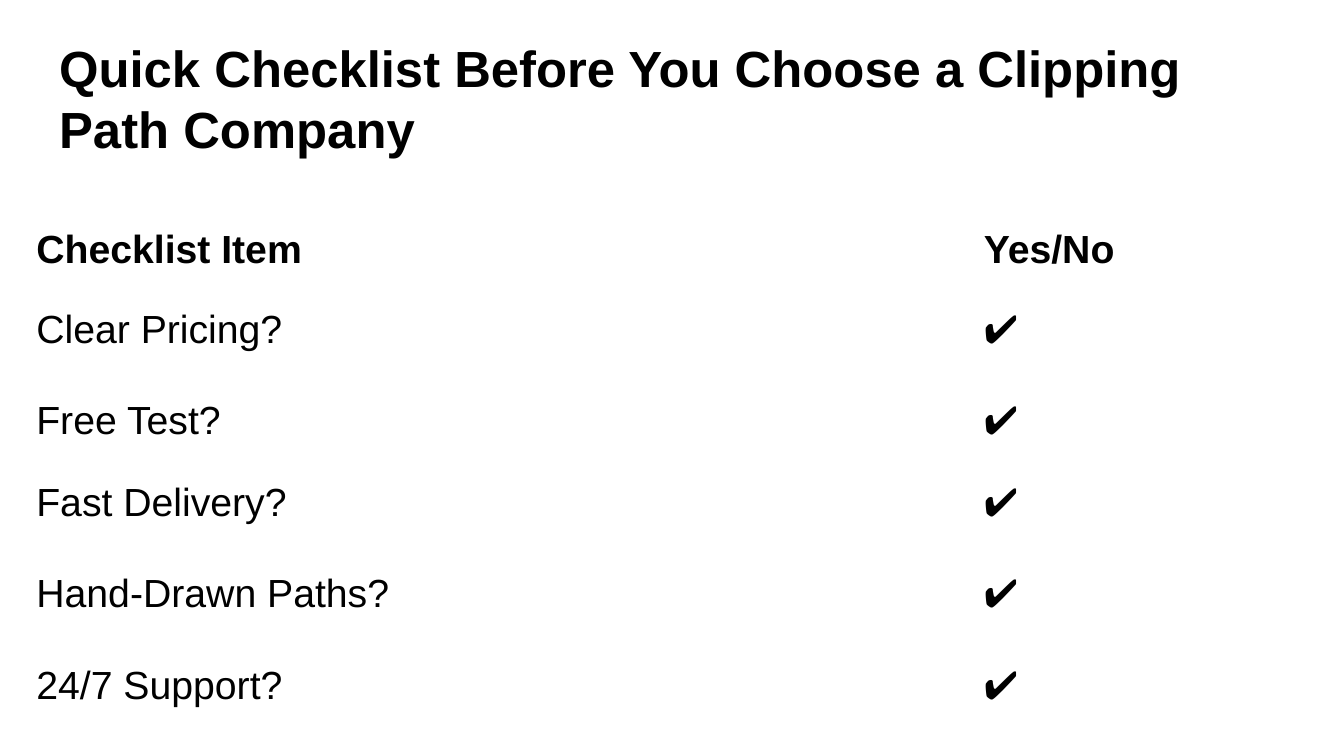
"""Build a one-slide checklist for choosing a clipping path company."""
from pptx import Presentation
from pptx import util as u
from pptx.dml import color
from pptx.enum import text

COLORS = {"text": "000000", "background": "FFFFFF"}
FONT = "Arial"


def style(p, size, bold, spacing):
    p.alignment = text.PP_ALIGN.LEFT
    p.line_spacing = spacing
    for r in p.runs:
        r.font.name = FONT
        r.font.size = u.Pt(size)
        r.font.bold = bold
        r.font.color.rgb = color.RGBColor.from_string(COLORS["text"])


prs = Presentation()
prs.slide_width, prs.slide_height = u.Inches(10), u.Inches(10 * 9 / 16)
s = prs.slides.add_slide(prs.slide_layouts[5])
s.background.fill.solid()
s.background.fill.fore_color.rgb = color.RGBColor.from_string(COLORS["background"])

title = s.shapes.title
title.left, title.top = u.Inches(0.34), u.Inches(0.17)
title.width, title.height = u.Inches(9.32), u.Inches(1.09)
tf = title.text_frame
tf.text = "Quick Checklist Before You Choose a Clipping Path Company"
tf.word_wrap = True
tf.auto_size = text.MSO_AUTO_SIZE.NONE
tf.vertical_anchor = text.MSO_ANCHOR.TOP
tf.margin_left = tf.margin_right = u.Inches(0.1)
tf.margin_top = tf.margin_bottom = u.Inches(0.1)
style(tf.paragraphs[0], 27.2, True, 1.0)

items = ["Clear Pricing?", "Free Test?", "Fast Delivery?", "Hand-Drawn Paths?", "24/7 Support?"]
rows = [("Checklist Item", "Yes/No")] + [(item, "✔") for item in items]
widths = [7.05, 2.64]
heights = [0.64, 0.68, 0.61, 0.68, 0.68, 0.68]

table = s.shapes.add_table(
    len(rows), len(widths), u.Inches(0.17), u.Inches(1.55),
    u.Inches(sum(widths)), u.Inches(sum(heights)),
).table
table.first_row = table.horz_banding = False
for column, width in zip(table.columns, widths):
    column.width = u.Inches(width)

for i, (row, height) in enumerate(zip(rows, heights)):
    table.rows[i].height = u.Inches(height)
    for cell, value in zip(table.rows[i].cells, row):
        cell.text = value
        cell.fill.solid()
        cell.fill.fore_color.rgb = color.RGBColor.from_string(COLORS["background"])
        cell.vertical_anchor = text.MSO_ANCHOR.TOP
        cell.margin_left = cell.margin_right = u.Inches(0.1)
        cell.margin_top = cell.margin_bottom = u.Inches(0.1)
        style(cell.text_frame.paragraphs[0], 21, i == 0, 1.15 if i == 0 else 1.0)

prs.save("out.pptx")
